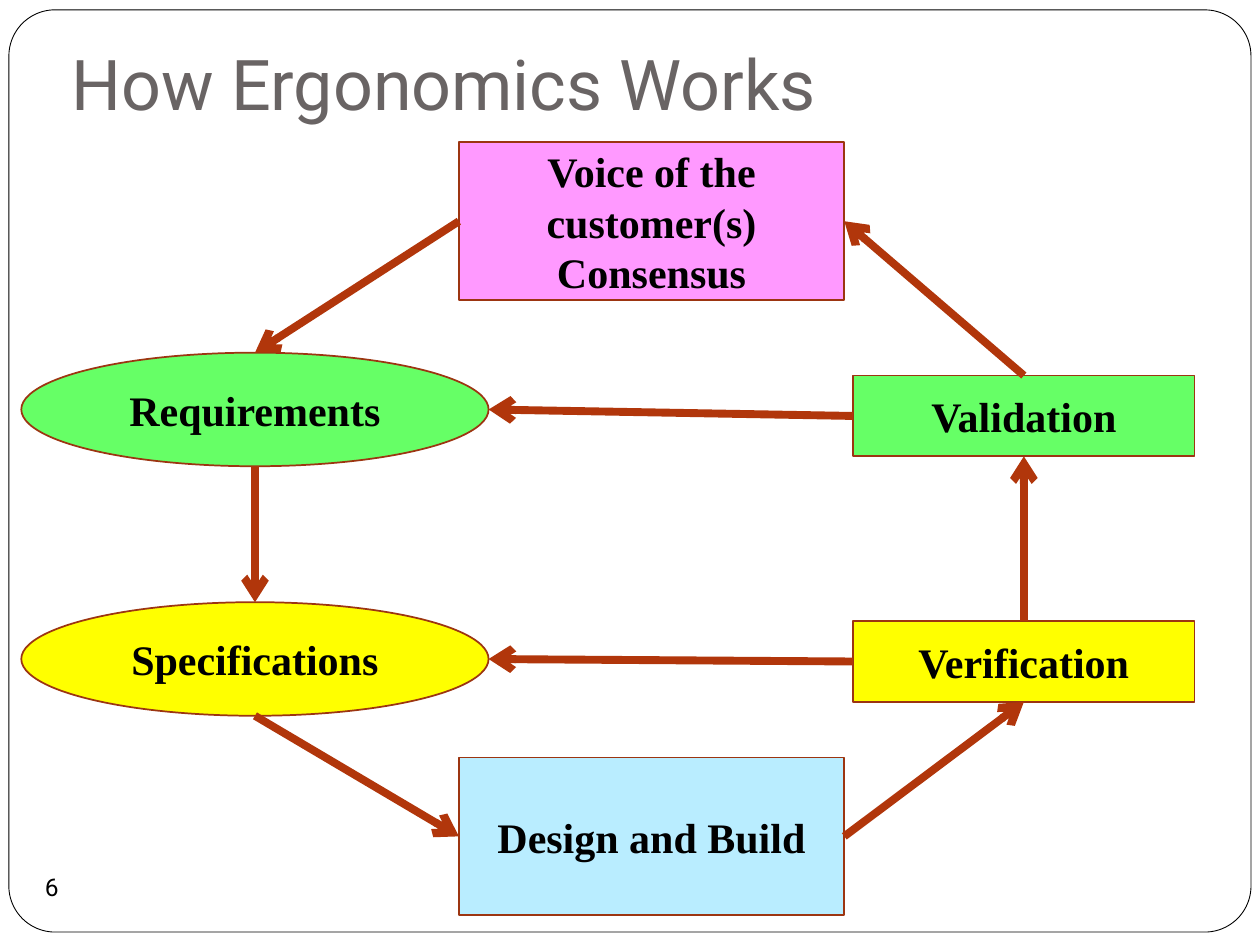
from lxml import etree
from pptx import Presentation, util as u
from pptx.dml.color import RGBColor
from pptx.enum import shapes, text
from pptx.oxml.ns import qn

NODES = {
    "Design and Build": ("RECTANGLE", 8.82, 12.4, 7.77, 3.18, "B9EDFF"),
    "Requirements": ("OVAL", 0, 4.24, 9.42, 2.29, "66FF66"),
    "Specifications": ("OVAL", 0, 9.27, 9.42, 2.29, "FFFF00"),
    "Voice of the customer(s)\nConsensus": ("RECTANGLE", 8.82, 0, 7.77, 3.18, "FF99FF"),
    "Verification": ("RECTANGLE", 16.77, 9.65, 6.88, 1.63, "FFFF00"),
    "Validation": ("RECTANGLE", 16.77, 4.7, 6.88, 1.63, "66FF66"),
}
TOP, LEFT, BOTTOM, RIGHT = range(4)
NODE_FONT = {"name": "Times New Roman", "size": u.Pt(24), "bold": True}
FRAME_INSETS = {"margin_left": 0, "margin_right": 0, "margin_top": 0, "margin_bottom": 0}
TITLE_FRAME = {"margin_left": u.Cm(0.25), "margin_right": u.Cm(0.25),
               "margin_top": u.Cm(0.13), "margin_bottom": u.Cm(0.25),
               "vertical_anchor": text.MSO_ANCHOR.BOTTOM, "word_wrap": True}


def color(value):
    """Turn a hex string into a colour."""
    return RGBColor.from_string(value)


def apply(target, values):
    """Set each attribute of target from a dict."""
    for name, value in values.items():
        setattr(target, name, value)


def write(shape, words, font, ink, align, frame):
    """Put formatted paragraphs into a shape."""
    apply(shape.text_frame, frame)
    shape.text_frame.text = words
    for para in shape.text_frame.paragraphs:
        para.alignment = align
        for span in para.runs:
            apply(span.font, font)
            span.font.color.rgb = color(ink)


def add_box(page, kind, box, fill=None, line=None, width=1):
    """Add a flat preset shape; box is left, top, width, height in cm."""
    shape = page.shapes.add_shape(getattr(shapes.MSO_SHAPE, kind), *map(u.Cm, box))
    shape.shadow.inherit = False
    if fill:
        shape.fill.solid()
        shape.fill.fore_color.rgb = color(fill)
    else:
        shape.fill.background()
    if line:
        shape.line.color.rgb = color(line)
        shape.line.width = u.Pt(width)
    else:
        shape.line.fill.background()
    return shape


def side_point(shape, side):
    """Find the middle of one side of a shape."""
    across = {LEFT: 0, RIGHT: shape.width}.get(side, shape.width // 2)
    down = {TOP: 0, BOTTOM: shape.height}.get(side, shape.height // 2)
    return shape.left + across, shape.top + down


def add_arrow(page, start, start_side, end, end_side):
    """Draw an arrow between two sides and join it to rectangles."""
    arrow = page.shapes.add_connector(
        shapes.MSO_CONNECTOR.STRAIGHT,
        *side_point(start, start_side), *side_point(end, end_side))
    if start.auto_shape_type == shapes.MSO_SHAPE.RECTANGLE:
        arrow.begin_connect(start, start_side)
    if end.auto_shape_type == shapes.MSO_SHAPE.RECTANGLE:
        arrow.end_connect(end, end_side)
    arrow.line.color.rgb = color("B1360B")
    arrow.line.width = u.Pt(4.5)
    etree.SubElement(arrow.line._get_or_add_ln(), qn("a:tailEnd"), type="arrow")
    etree.SubElement(arrow._element.spPr, qn("a:effectLst"))


def add_title(page, box):
    """Place and format the title placeholder."""
    title = page.shapes.title
    apply(title, dict(zip(("left", "top", "width", "height"), map(u.Cm, box))))
    write(title, "How Ergonomics Works", {"name": "Roboto", "size": u.Pt(40)},
          "696464", text.PP_ALIGN.LEFT, TITLE_FRAME)


def add_page_number(page, box):
    """Write the page number in an unfilled circle."""
    write(add_box(page, "OVAL", box), "6", {"name": "Roboto", "size": u.Pt(14)},
          "000000", text.PP_ALIGN.CENTER,
          FRAME_INSETS | {"vertical_anchor": text.MSO_ANCHOR.MIDDLE, "word_wrap": False})


def add_cycle(page, left, top):
    """Draw the development cycle from its top left corner."""
    placed = []
    for words, (kind, x, y, width, height, fill) in NODES.items():
        node = add_box(page, kind, (left + x, top + y, width, height), fill, "9C3511")
        write(node, words, NODE_FONT, "000000", text.PP_ALIGN.CENTER,
              {"vertical_anchor": text.MSO_ANCHOR.MIDDLE, "word_wrap": True})
        placed.append(node)
    design, requirements, specifications, voice, verification, validation = placed
    for link in (
        (voice, LEFT, requirements, TOP),
        (verification, TOP, validation, BOTTOM),
        (design, RIGHT, verification, BOTTOM),
        (specifications, BOTTOM, design, LEFT),
        (requirements, BOTTOM, specifications, TOP),
        (validation, LEFT, requirements, RIGHT),
        (verification, LEFT, specifications, RIGHT),
        (validation, TOP, voice, RIGHT),
    ):
        add_arrow(page, *link)


def main():
    """Build and save the slide."""
    deck = Presentation()
    deck.slide_width, deck.slide_height = u.Cm(25.4), u.Cm(19.05)
    page = deck.slides.add_slide(deck.slide_layouts.get_by_name("Title Only"))
    border = add_box(page, "ROUNDED_RECTANGLE", (0.18, 0.2, 25.04, 18.59),
                     "FFFFFF", "000000", 0.5)
    border.adjustments[0] = 0.05
    page.shapes._spTree.insert(2, border._element)
    add_title(page, (1.19, 0.69, 22.86, 2.08))
    add_page_number(page, (0.41, 17.25, 1.27, 1.27))
    add_cycle(page, 0.43, 2.87)
    deck.save("out.pptx")


if __name__ == "__main__":
    main()
